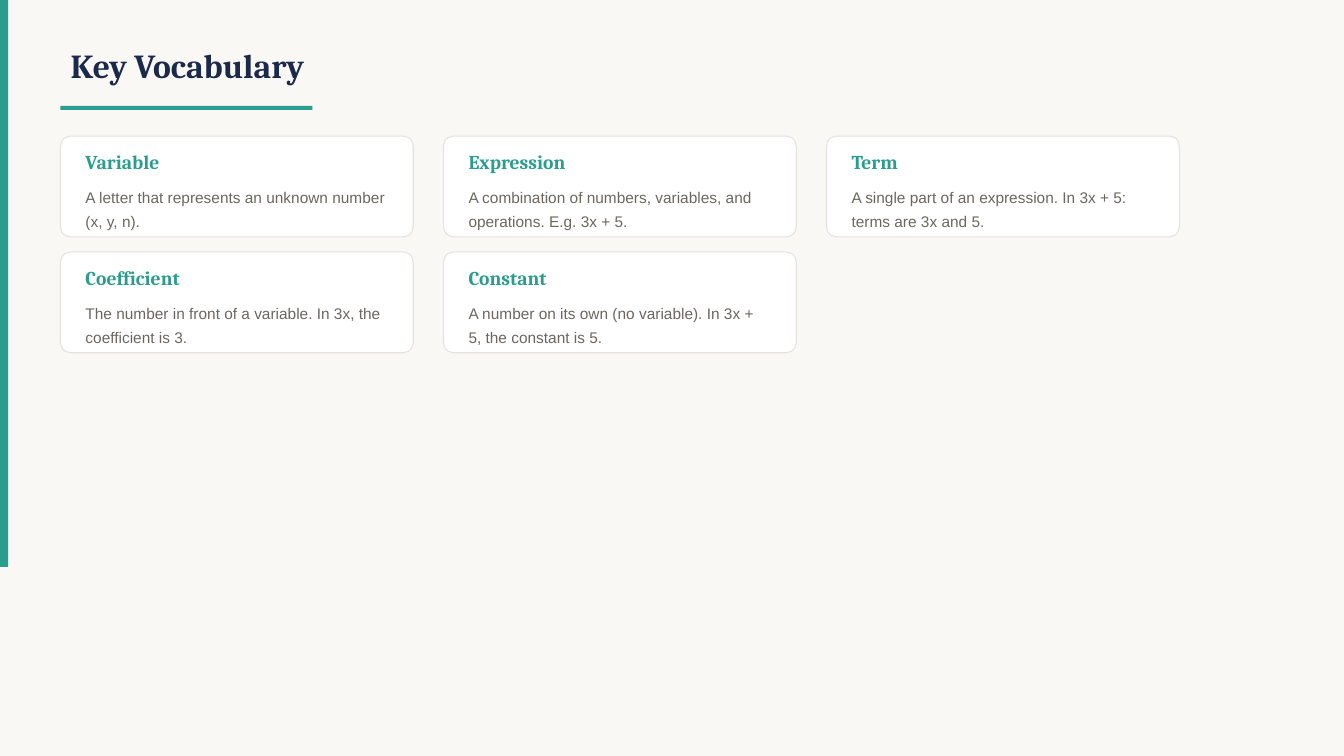
from dataclasses import dataclass

from pptx import Presentation
from pptx.dml.color import RGBColor
from pptx.enum.shapes import MSO_SHAPE
from pptx.enum.text import MSO_ANCHOR, MSO_AUTO_SIZE, PP_ALIGN
from pptx.util import Pt

RECT = MSO_SHAPE.RECTANGLE
ROUNDED = MSO_SHAPE.ROUNDED_RECTANGLE
MIDDLE = MSO_ANCHOR.MIDDLE
LEFT = PP_ALIGN.LEFT
NO_FIT = MSO_AUTO_SIZE.NONE

CREAM, WHITE, TEAL = "FAF8F5", "FFFFFF", "2A9D8F"
NAVY, GREY, BORDER = "1B2A4A", "6B6660", "E5E2DC"

# Card grid, in points
COLUMNS = 3
MARGIN, GRID_TOP = 43.2, 97.2
CARD_W, CARD_H = 252, 72
PITCH_X, PITCH_Y = 273.6, 82.8
PAD, TEXT_W = 10.8, 230.4


@dataclass(frozen=True)
class Box:
    x: float
    y: float
    w: float
    h: float


@dataclass(frozen=True)
class Style:
    font: str
    size: float
    color: str
    bold: bool = False
    spacing: float = 1.0


@dataclass(frozen=True)
class Entry:
    term: str
    meaning: str


TITLE = Style("Cambria", 24, NAVY, bold=True)
TERM = Style("Cambria", 14, TEAL, bold=True)
MEANING = Style("Arial", 11, GREY, spacing=1.3)

ENTRIES = [
    Entry("Variable", "A letter that represents an unknown number (x, y, n)."),
    Entry("Expression", "A combination of numbers, variables, and operations. E.g. 3x + 5."),
    Entry("Term", "A single part of an expression. In 3x + 5: terms are 3x and 5."),
    Entry("Coefficient", "The number in front of a variable. In 3x, the coefficient is 3."),
    Entry("Constant", "A number on its own (no variable). In 3x + 5, the constant is 5."),
]


def rgb(value: str) -> RGBColor:
    return RGBColor.from_string(value)


def place(box: Box) -> tuple:
    return Pt(box.x), Pt(box.y), Pt(box.w), Pt(box.h)


def add_panel(slide, kind, box: Box, fill: str, line: str = ""):
    sp = slide.shapes.add_shape(kind, *place(box))
    sp.shadow.inherit = False
    sp.fill.solid()
    sp.fill.fore_color.rgb = rgb(fill)
    if line:
        sp.line.color.rgb = rgb(line)
        sp.line.width = Pt(0.75)
    else:
        sp.line.fill.background()
    return sp


def write(sp, text: str, style: Style) -> None:
    tf = sp.text_frame
    tf.text = text
    tf.word_wrap = True
    tf.auto_size = NO_FIT
    tf.vertical_anchor = MIDDLE
    p = tf.paragraphs[0]
    p.alignment = LEFT
    p.line_spacing = style.spacing
    font = p.runs[0].font
    font.name, font.size, font.bold = style.font, Pt(style.size), style.bold
    font.color.rgb = rgb(style.color)


def add_text(slide, box: Box, text: str, style: Style) -> None:
    write(slide.shapes.add_textbox(*place(box)), text, style)


def add_card(slide, x: float, y: float, entry: Entry) -> None:
    card = add_panel(slide, ROUNDED, Box(x, y, CARD_W, CARD_H), WHITE, BORDER)
    card.adjustments[0] = 0.1
    add_text(slide, Box(x + PAD, y + 5.76, TEXT_W, 25.2), entry.term, TERM)
    add_text(slide, Box(x + PAD, y + 32.4, TEXT_W, 36), entry.meaning, MEANING)


def main() -> None:
    prs = Presentation()
    prs.slide_width, prs.slide_height = Pt(960), Pt(540)
    slide = prs.slides.add_slide(prs.slide_layouts[5])
    slide.background.fill.solid()
    slide.background.fill.fore_color.rgb = rgb(CREAM)

    # Side bar, title and underline
    add_panel(slide, RECT, Box(0, 0, 5.76, 405), TEAL)
    title = slide.shapes.title
    title.left, title.top, title.width, title.height = place(Box(MARGIN, 21.6, 720, 50.4))
    write(title, "Key Vocabulary", TITLE)
    add_panel(slide, RECT, Box(MARGIN, 75.6, 180, 2.88), TEAL)

    # Vocabulary cards
    for i, entry in enumerate(ENTRIES):
        row, col = divmod(i, COLUMNS)
        add_card(slide, MARGIN + col * PITCH_X, GRID_TOP + row * PITCH_Y, entry)

    prs.save("out.pptx")


if __name__ == "__main__":
    main()
